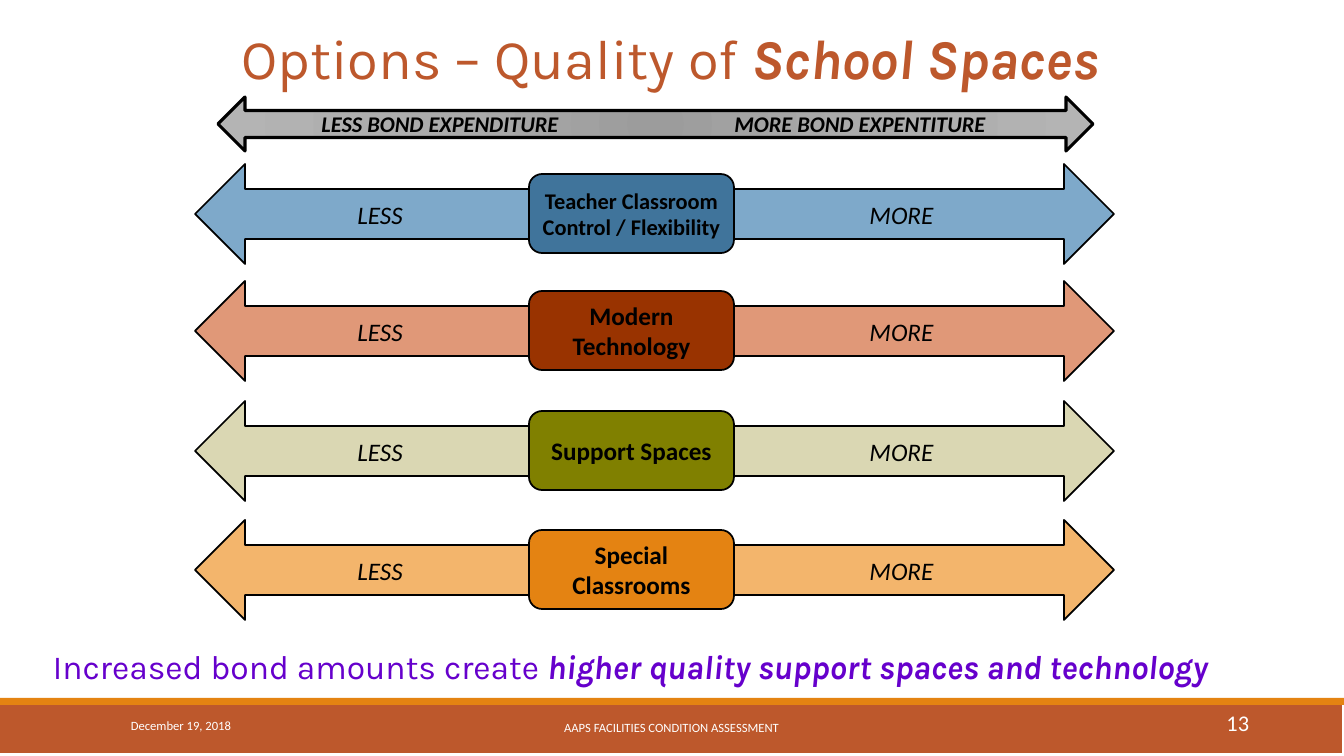
from lxml import etree
from pptx import Presentation
from pptx.dml.color import RGBColor
from pptx.enum.shapes import MSO_SHAPE
from pptx.enum.text import MSO_ANCHOR, PP_ALIGN
from pptx.oxml import parse_xml
from pptx.oxml.ns import nsdecls, qn
from pptx.util import Emu, Pt

PX = 914400 / 100.8
ROWS = [
    (164, "Teacher Classroom Control / Flexibility", 16, "7EA9CA", "40749B"),
    (281, "Modern Technology", 18, "E09878", "993300"),
    (401, "Support Spaces", 18, "DAD7B3", "808000"),
    (520, "Special Classrooms", 18, "F3B56C", "E48312"),
]


def px(n):
    """Turn pixels into EMU."""
    return Emu(round(n * PX))


def rgb(value):
    """Turn a hex string into a colour."""
    return RGBColor.from_string(value)


def write(s, runs, size, color, align=PP_ALIGN.CENTER, font="Calibri"):
    """Write (text, bold, italic) runs as the one paragraph of a shape."""
    tf = s.text_frame
    tf.word_wrap = True
    tf.vertical_anchor = MSO_ANCHOR.MIDDLE
    p = tf.paragraphs[0]
    p.alignment = align
    for text, bold, italic in runs:
        r = p.add_run()
        r.text = text
        r.font.name = font
        r.font.size = Pt(size)
        r.font.bold = bold
        r.font.italic = italic
        r.font.color.rgb = rgb(color)
    return p


def add_block(slide, kind, box, fill, line_width=0):
    """Add a filled preset shape, outlined in black if a width is given."""
    s = slide.shapes.add_shape(kind, *map(px, box))
    s.shadow.inherit = False
    s.fill.solid()
    s.fill.fore_color.rgb = rgb(fill)
    if line_width:
        s.line.color.rgb = rgb("000000")
        s.line.width = Pt(line_width)
    else:
        s.line.fill.background()
    return s


def add_text(slide, box, runs, size, color, align=PP_ALIGN.CENTER, font="Calibri"):
    """Add a text box holding one paragraph."""
    s = slide.shapes.add_textbox(*map(px, box))
    return write(s, runs, size, color, align, font)


def add_row(slide, top, label, size, pale, strong):
    """Add a LESS arrow, a MORE arrow and the labelled box between them."""
    arrows = [(MSO_SHAPE.LEFT_ARROW, 195, 345, "LESS"),
              (MSO_SHAPE.RIGHT_ARROW, 714, 400, "MORE")]
    for kind, left, width, text in arrows:
        s = add_block(slide, kind, (left, top, width, 100), pale, 1.25)
        write(s, [(text, False, True)], 18, "000000")
    s = add_block(slide, MSO_SHAPE.ROUNDED_RECTANGLE,
                  (529, top + 10, 205, 79), strong, 1.25)
    write(s, [(label, True, False)], size, "000000")


def set_radial(s, stops):
    """Replace the fill of a shape by a gradient around its centre."""
    gs = "".join(f'<a:gs pos="{pos * 1000}"><a:srgbClr val="{color}"/></a:gs>'
                 for pos, color in stops)
    grad = parse_xml(
        f'<a:gradFill {nsdecls("a")} rotWithShape="1"><a:gsLst>{gs}</a:gsLst>'
        '<a:path path="circle"><a:fillToRect l="100000" t="100000" '
        'r="100000" b="100000"/></a:path></a:gradFill>')
    solid = s.element.spPr.find(qn("a:solidFill"))
    solid.getparent().replace(solid, grad)


def add_spending_arrow(slide):
    """Add the grey arrow whose two labels stand at tab stops."""
    s = add_block(slide, MSO_SHAPE.LEFT_RIGHT_ARROW, (218, 97, 875, 54), "AAAAAA", 2.25)
    set_radial(s, [(0, "9C9C9C"), (45, "AAAAAA"), (100, "B4B4B4")])
    tf = s.text_frame
    tf.margin_left = tf.margin_right = tf.margin_top = tf.margin_bottom = 0
    tabs = etree.SubElement(tf.paragraphs[0]._p.get_or_add_pPr(), qn("a:tabLst"))
    for pos in (90, 503):
        etree.SubElement(tabs, qn("a:tab"), pos=str(px(pos)), algn="l")
    text = "\tLESS BOND EXPENDITURE\tMORE BOND EXPENTITURE"
    write(s, [(text, True, True)], 16, "000000", PP_ALIGN.LEFT)


def add_footer(slide):
    """Add the two bottom bars with date, report name and page number."""
    add_block(slide, MSO_SHAPE.RECTANGLE, (-2, 703, 1344, 50), "BD582C")
    add_block(slide, MSO_SHAPE.RECTANGLE, (0, 698, 1344, 7), "E48312")
    items = [((121, 706, 272, 40), "December 19, 2018", 9, PP_ALIGN.LEFT),
             ((406, 708, 531, 40), "AAPS FACILITIES CONDITION ASSESSMENT", 9, PP_ALIGN.CENTER),
             ((1115, 703, 144, 40), "13", 16, PP_ALIGN.RIGHT)]
    for box, text, size, align in items:
        add_text(slide, box, [(text, False, False)], size, "FFFFFF", align)


def main():
    """Build the slide and save it."""
    prs = Presentation()
    prs.slide_width, prs.slide_height = px(1344), px(756)
    slide = prs.slides.add_slide(prs.slide_layouts[6])
    add_footer(slide)
    title = add_text(slide, (15, 22, 1310, 81),
                     [("Options – Quality of ", False, False), ("School Spaces", True, True)],
                     40, "BD582C", font="Karla")
    title.line_spacing = 0.85
    add_text(slide, (43, 641, 1283, 51),
             [("Increased bond amounts create ", False, False),
              ("higher quality support spaces and technology", True, True)],
             24, "6600CC", PP_ALIGN.LEFT, "Karla")
    for row in ROWS:
        add_row(slide, *row)
    add_spending_arrow(slide)
    prs.save("out.pptx")


if __name__ == "__main__":
    main()
